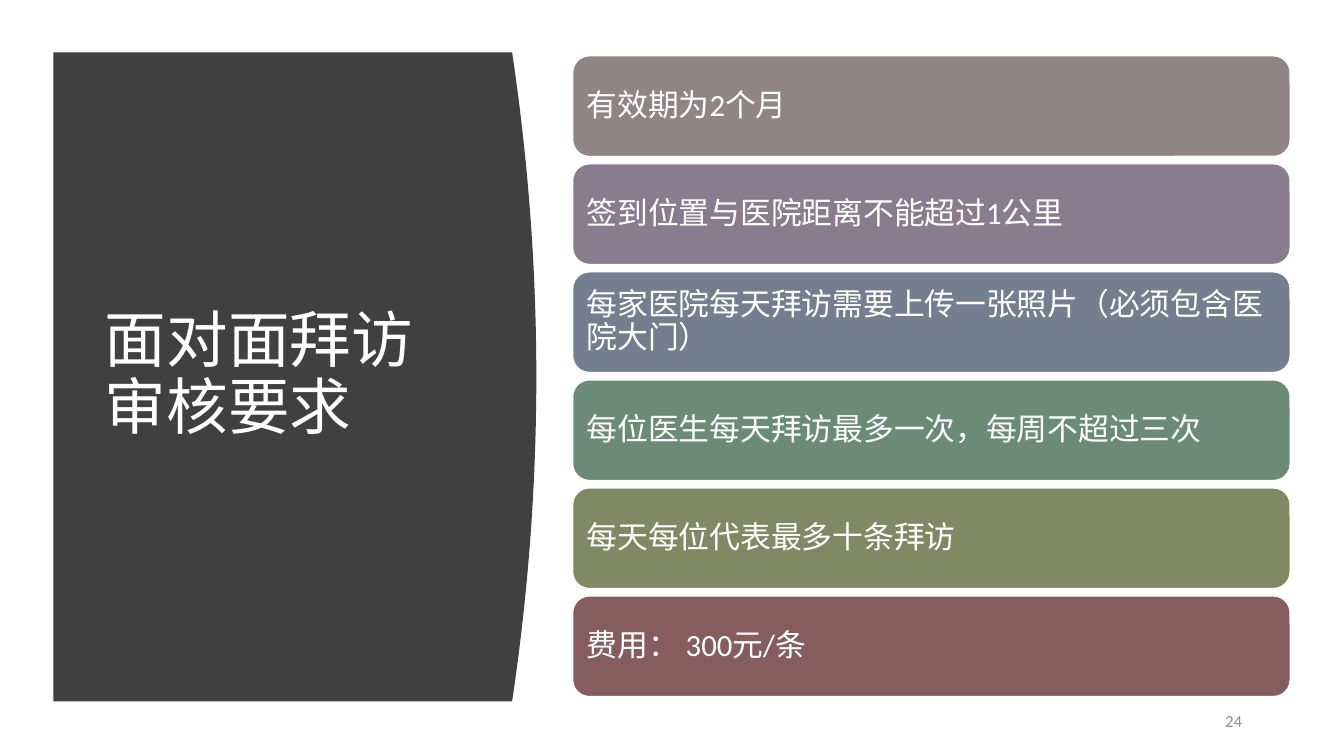
from pptx import Presentation
from pptx.dml.color import RGBColor
from pptx.enum.shapes import MSO_SHAPE
from pptx.enum.text import MSO_ANCHOR, MSO_AUTO_SIZE, PP_ALIGN
from pptx.util import Pt

COLORS = {
    "white": "FFFFFF",
    "panel": "404040",
    "number": "8C8C8C",
    "taupe": "918485",
    "purple": "8A7C8F",
    "slate": "737F8E",
    "green": "6B8B77",
    "olive": "818864",
    "maroon": "855D5D",
}
FONT = "Calibri"
TITLE = "面对面拜访审核要求"
REQUIREMENTS = [
    ("有效期为2个月", "taupe"),
    ("签到位置与医院距离不能超过1公里", "purple"),
    ("每家医院每天拜访需要上传一张照片（必须包含医院大门）", "slate"),
    ("每位医生每天拜访最多一次，每周不超过三次", "green"),
    ("每天每位代表最多十条拜访", "olive"),
    ("费用： 300元/条", "maroon"),
]


def color(name):
    return RGBColor.from_string(COLORS[name])


def write(shape, text, size, color_name, alignment=PP_ALIGN.LEFT, spacing=None):
    frame = shape.text_frame
    frame.text = text
    frame.word_wrap = True
    frame.auto_size = MSO_AUTO_SIZE.NONE
    frame.vertical_anchor = MSO_ANCHOR.MIDDLE
    paragraph = frame.paragraphs[0]
    paragraph.alignment = alignment
    paragraph.line_spacing = spacing
    font = paragraph.runs[0].font
    font.name = FONT
    font.size = Pt(size)
    font.color.rgb = color(color_name)


def add_panel(slide, left, top, width, height, bulge=17.3, steps=40):
    """Dark panel whose right edge bows outwards as a parabola."""
    edge = []
    for step in range(steps + 1):
        offset = 2 * step / steps - 1
        x = left + width - bulge * offset ** 2
        edge.append((Pt(x), Pt(top + height * step / steps)))
    builder = slide.shapes.build_freeform(Pt(left), Pt(top))
    builder.add_line_segments(edge + [(Pt(left), Pt(top + height))], close=True)
    panel = builder.convert_to_shape()
    panel.shadow.inherit = False
    panel.fill.solid()
    panel.fill.fore_color.rgb = color("panel")
    panel.line.fill.background()


def place_title(slide, left, top, width, height):
    title = slide.shapes.title
    title.left, title.top = Pt(left), Pt(top)
    title.width, title.height = Pt(width), Pt(height)
    write(title, TITLE, 44, "white", spacing=0.9)
    # Bring the title in front of the panel
    slide.shapes._spTree.append(title._element)


def add_requirements(slide, left, top, width, height, gap=5.2):
    count = len(REQUIREMENTS)
    bar_height = (height - gap * (count - 1)) / count
    for index, (text, fill) in enumerate(REQUIREMENTS):
        bar_top = top + index * (bar_height + gap)
        bar = slide.shapes.add_shape(
            MSO_SHAPE.ROUNDED_RECTANGLE, Pt(left), Pt(bar_top), Pt(width), Pt(bar_height)
        )
        bar.shadow.inherit = False
        bar.fill.solid()
        bar.fill.fore_color.rgb = color(fill)
        bar.line.color.rgb = color("white")
        bar.line.width = Pt(1)
        frame = bar.text_frame
        frame.margin_left = frame.margin_right = Pt(6.5)
        frame.margin_top = frame.margin_bottom = Pt(6.5)
        write(bar, text, 22, "white", spacing=0.9)


def add_page_number(slide, left, top, width, height):
    box = slide.shapes.add_textbox(Pt(left), Pt(top), Pt(width), Pt(height))
    write(box, "24", 12, "number", PP_ALIGN.RIGHT)


def main():
    presentation = Presentation()
    presentation.slide_width, presentation.slide_height = Pt(960), Pt(540)
    slide = presentation.slides.add_slide(presentation.slide_layouts[5])
    add_panel(slide, 38.2, 37.4, 344.9, 463.7)
    place_title(slide, 67.7, 80, 269.3, 377.3)
    add_page_number(slide, 844.6, 500.4, 49.7, 28.8)
    add_requirements(slide, 409, 39.8, 512.6, 457.8)
    presentation.save("out.pptx")


if __name__ == "__main__":
    main()
